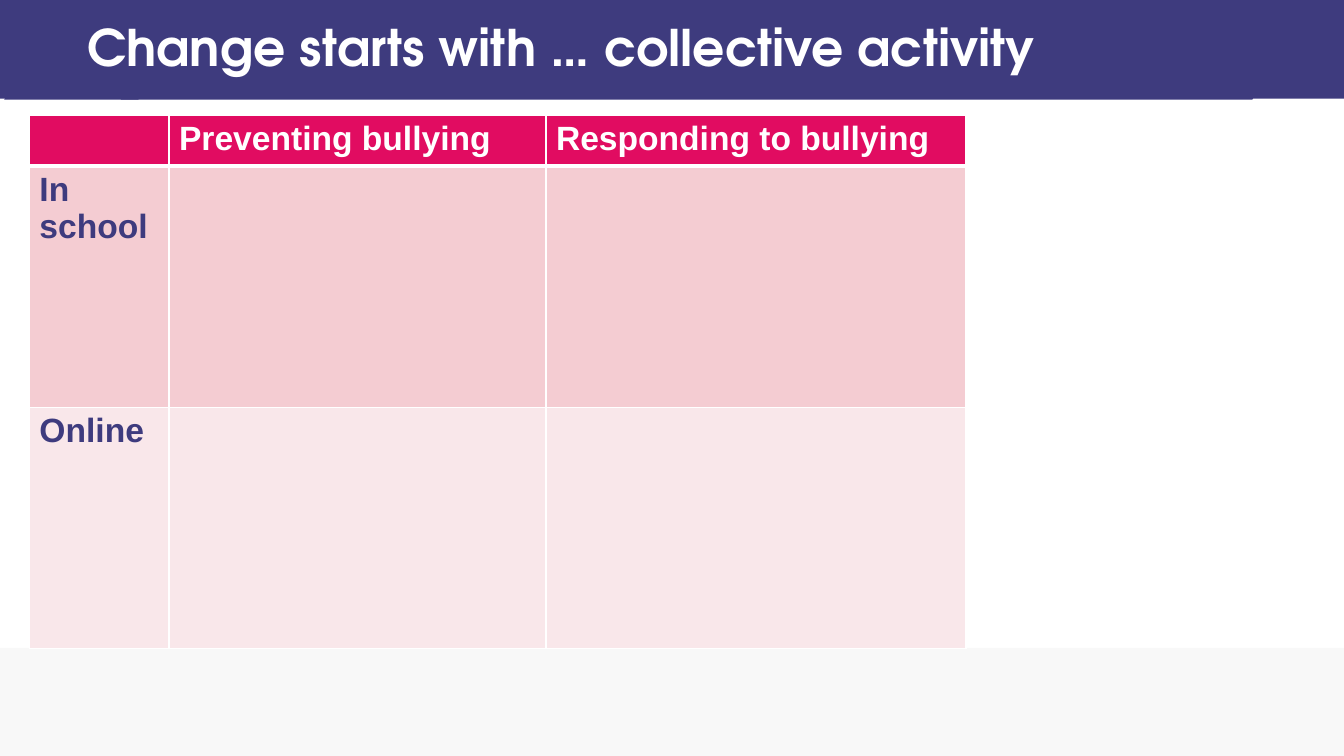
import pptx
import pptx.util
import pptx.dml.color
import pptx.enum.shapes
import pptx.enum.text
import pptx.oxml.ns
import lxml.etree

PX = 9525
COLORS = {
    "indigo": "3E3B7E",
    "white": "FFFFFF",
    "footer": "F2F2F2",
    "magenta": "E10C61",
    "rose": "F4CCD2",
    "blush": "F9E7EA",
}


def rgb(name):
    return pptx.dml.color.RGBColor.from_string(COLORS[name])


def write(frame, text, font, size, color):
    para = frame.paragraphs[0]
    span = para.add_run()
    span.text = text
    for key, value in {"name": font, "size": pptx.util.Pt(size), "bold": True}.items():
        setattr(span.font, key, value)
    span.font.color.rgb = rgb(color)
    return para


deck = pptx.Presentation()
deck.slide_width = 1280 * PX
deck.slide_height = 720 * PX
slide = deck.slides.add_slide(deck.slide_layouts[6])
kinds = pptx.enum.shapes.MSO_SHAPE

for kind, left, top, width, height, color in [
    (kinds.PARALLELOGRAM, 115, 0, 1122, 95, "indigo"),
    (kinds.PARALLELOGRAM, 4, 0, 172, 95, "indigo"),
    (kinds.RECTANGLE, 1108, 0, 172, 94, "indigo"),
    (kinds.RECTANGLE, 0, 0, 66, 94, "indigo"),
    (kinds.RECTANGLE, 0, 617, 1280, 103, "footer"),
]:
    band = slide.shapes.add_shape(kind, left * PX, top * PX, width * PX, height * PX)
    band.shadow.inherit = False
    band.fill.solid()
    band.fill.fore_color.rgb = rgb(color)
    band.line.fill.background()
    if kind == kinds.PARALLELOGRAM:
        band.adjustments[0] = 0.465
    if color == "footer":
        tint = band.fill._xPr.find(".//" + pptx.oxml.ns.qn("a:srgbClr"))
        lxml.etree.SubElement(tint, pptx.oxml.ns.qn("a:alpha"), val="50000")

title = slide.shapes.add_textbox(76 * PX, 1 * PX, 1177 * PX, 94 * PX)
for key, value in {
    "word_wrap": True,
    "vertical_anchor": pptx.enum.text.MSO_ANCHOR.MIDDLE,
    "margin_left": 7 * PX,
    "margin_right": 7 * PX,
    "margin_top": 4 * PX,
    "margin_bottom": 4 * PX,
}.items():
    setattr(title.text_frame, key, value)
heading = write(title.text_frame, "Change starts with … collective activity",
                "TeX Gyre Adventor", 36, "white")
heading.line_spacing = 0.9

columns = [133, 359, 400]
rows = [
    (46, "magenta", "white", ["", "Preventing bullying", "Responding to bullying"]),
    (230, "rose", "indigo", ["In school", "", ""]),
    (230, "blush", "indigo", ["Online", "", ""]),
]
table = slide.shapes.add_table(
    len(rows), len(columns), 28 * PX, 110 * PX,
    sum(columns) * PX, sum(row[0] for row in rows) * PX).table
for index, width in enumerate(columns):
    table.columns[index].width = width * PX
for row_index, (height, fill, ink, texts) in enumerate(rows):
    table.rows[row_index].height = height * PX
    for column_index, text in enumerate(texts):
        cell = table.cell(row_index, column_index)
        cell.fill.solid()
        cell.fill.fore_color.rgb = rgb(fill)
        if text:
            write(cell.text_frame, text, "Arial", 24, ink)
        header_edge = {0: "lnB", 1: "lnT"}.get(row_index)
        for position, edge in enumerate(["lnL", "lnR", "lnT", "lnB"]):
            points = 3 if edge == header_edge else 1
            border = lxml.etree.Element(
                pptx.oxml.ns.qn("a:" + edge), w=str(pptx.util.Pt(points)))
            solid = lxml.etree.SubElement(border, pptx.oxml.ns.qn("a:solidFill"))
            lxml.etree.SubElement(
                solid, pptx.oxml.ns.qn("a:srgbClr"), val=COLORS["white"])
            cell._tc.get_or_add_tcPr().insert(position, border)

deck.save("out.pptx")
